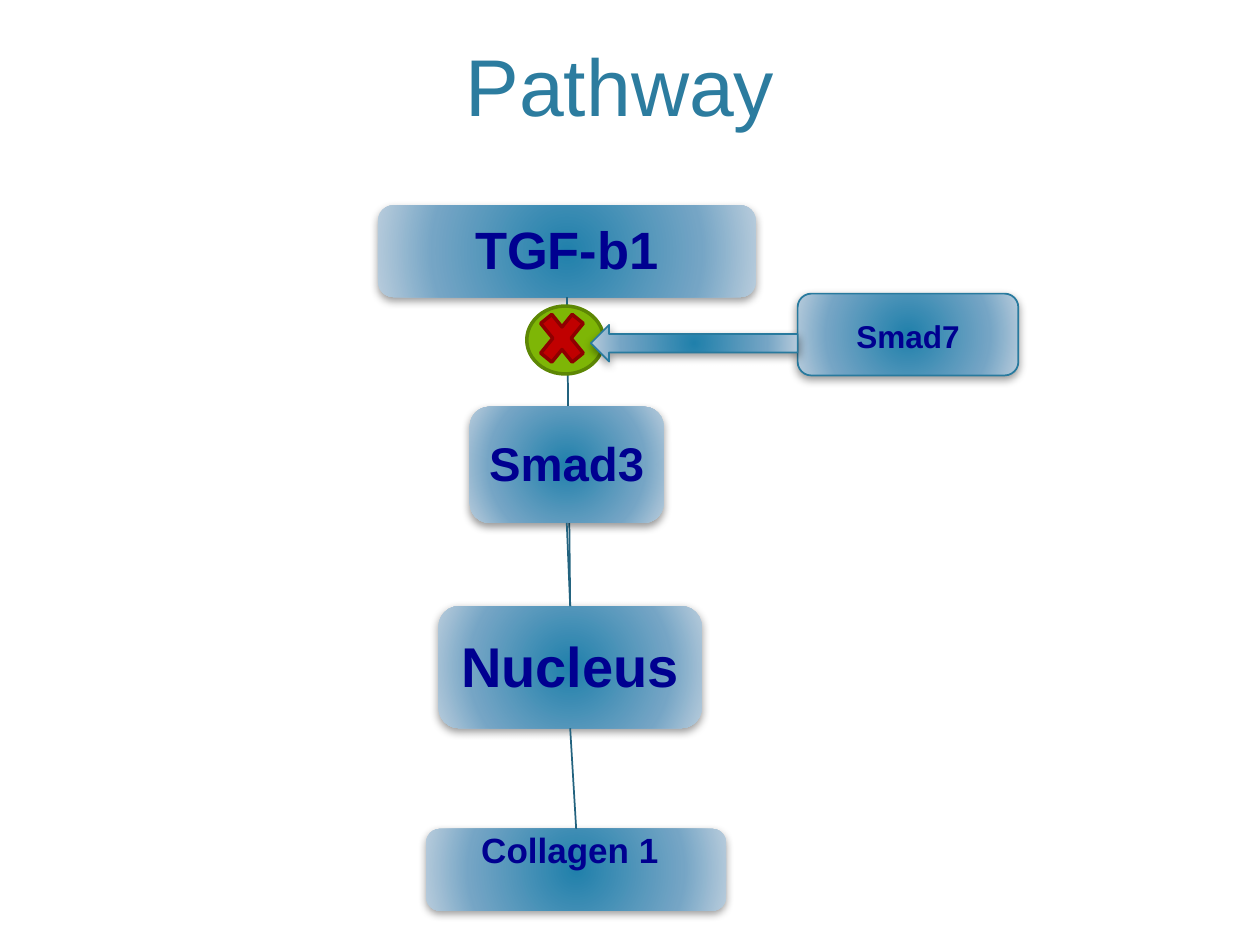
import pptx
import pptx.util
import pptx.dml.color
import pptx.enum.shapes
import pptx.enum.text
import pptx.oxml
import pptx.oxml.ns
from pptx.util import Cm

SHAPE = pptx.enum.shapes.MSO_SHAPE
ANCHOR = pptx.enum.text.MSO_ANCHOR
TOP, BOTTOM = 0, 2


def rgb(value):
    return pptx.dml.color.RGBColor.from_string(value)


def write(frame, text, size, color, bold=False, anchor=ANCHOR.MIDDLE,
          spacing=1.0, top=0.2, right=0.2):
    frame.word_wrap = True
    frame.auto_size = pptx.enum.text.MSO_AUTO_SIZE.NONE
    frame.vertical_anchor = anchor
    frame.margin_left = Cm(0.2)
    frame.margin_right = Cm(right)
    frame.margin_top = Cm(top)
    frame.margin_bottom = Cm(0.13)
    paragraph = frame.paragraphs[0]
    paragraph.alignment = pptx.enum.text.PP_ALIGN.CENTER
    paragraph.line_spacing = spacing
    run = paragraph.add_run()
    run.text = text
    run.font.name = "Arial"
    run.font.size = pptx.util.Pt(size)
    run.font.bold = bold
    run.font.color.rgb = rgb(color)


def drawing_xml(body):
    return pptx.oxml.parse_xml(body.replace(">", f" {pptx.oxml.ns.nsdecls('a')}>", 1))


class PathwaySlide:
    title_color = "2C7C9F"
    label_color = "000090"
    link_color = "23637F"
    edge_color = "287A9E"
    glow = [(0, "2080AB"), (69, "75A5C5"), (100, "B8CCDC")]

    def __init__(self, deck):
        self.slide = deck.slides.add_slide(deck.slide_layouts[5])

    def title(self, text, left, top, width, height):
        heading = self.slide.shapes.title
        heading.left, heading.top = Cm(left), Cm(top)
        heading.width, heading.height = Cm(width), Cm(height)
        write(heading.text_frame, text, 46, self.title_color,
              anchor=ANCHOR.BOTTOM, right=0.6)

    def symbol(self, kind, left, top, width, height, fill=None, line=None, weight=1):
        shape = self.slide.shapes.add_shape(
            kind, Cm(left), Cm(top), Cm(width), Cm(height))
        shape.shadow.inherit = False
        if line:
            shape.line.color.rgb = rgb(line)
            shape.line.width = pptx.util.Pt(weight)
        else:
            shape.line.fill.background()
        if fill:
            shape.fill.solid()
            shape.fill.fore_color.rgb = rgb(fill)
        return shape

    def glowing(self, kind, *place, line=None):
        shape = self.symbol(kind, *place, line=line)
        shape.fill.gradient()
        properties = shape._element.spPr
        stops = "".join(
            f'<a:gs pos="{position * 1000}"><a:srgbClr val="{color}"/></a:gs>'
            for position, color in self.glow)
        properties.replace(
            properties.find(pptx.oxml.ns.qn("a:gradFill")),
            drawing_xml(
                f'<a:gradFill><a:gsLst>{stops}</a:gsLst><a:path path="circle">'
                '<a:fillToRect l="50000" t="50000" r="50000" b="50000"/>'
                '</a:path></a:gradFill>'))
        properties.find(pptx.oxml.ns.qn("a:effectLst")).append(drawing_xml(
            '<a:outerShdw blurRad="63500" dist="25400" dir="5400000" rotWithShape="0">'
            '<a:srgbClr val="000000"><a:alpha val="40000"/></a:srgbClr></a:outerShdw>'))
        return shape

    def step(self, text, size, *place, line=None, **text_format):
        box = self.glowing(SHAPE.ROUNDED_RECTANGLE, *place, line=line)
        write(box.text_frame, text, size, self.label_color, bold=True, **text_format)
        return box

    def link(self, start, start_side, end, end_side):
        connector = self.slide.shapes.add_connector(
            pptx.enum.shapes.MSO_CONNECTOR.STRAIGHT, 0, 0, 0, 0)
        connector.begin_connect(start, start_side)
        connector.end_connect(end, end_side)
        connector.line.color.rgb = rgb(self.link_color)
        connector.line.width = pptx.util.Pt(1)
        connector._element.spPr.append(drawing_xml("<a:effectLst></a:effectLst>"))


def main():
    deck = pptx.Presentation()
    deck.slide_width, deck.slide_height = Cm(25.4), Cm(19.05)
    pathway = PathwaySlide(deck)
    pathway.title("Pathway", 1.52, -0.91, 22.35, 3.71)

    nucleus = pathway.step("Nucleus", 32, 8.84, 12.22, 5.31, 2.46, spacing=0.9)
    tgf = pathway.step("TGF-b1", 30, 7.62, 4.14, 7.62, 1.85, spacing=0.9)
    collagen = pathway.step("Collagen 1", 20, 8.59, 16.71, 6.05, 1.65, spacing=0.9,
                            anchor=ANCHOR.TOP, top=0, right=0.45)
    pathway.link(nucleus, TOP, tgf, BOTTOM)
    pathway.link(nucleus, BOTTOM, collagen, TOP)
    smad3 = pathway.step("Smad3", 27, 9.47, 8.2, 3.91, 2.34, spacing=0.9)
    pathway.link(nucleus, TOP, smad3, BOTTOM)

    pathway.step("Smad7", 18, 16.08, 5.92, 4.45, 1.65, line=pathway.edge_color)
    pathway.symbol(SHAPE.OVAL, 10.62, 6.17, 1.55, 1.37, "7EB606", "5D8704", 2)
    pathway.symbol(SHAPE.MATH_MULTIPLY, 10.72, 6.07, 1.22, 1.5, "C00000", "8E0000", 2)
    pathway.glowing(SHAPE.LEFT_ARROW, 11.91, 6.55, 4.17, 0.74, line=pathway.edge_color)
    deck.save("out.pptx")


if __name__ == "__main__":
    main()
